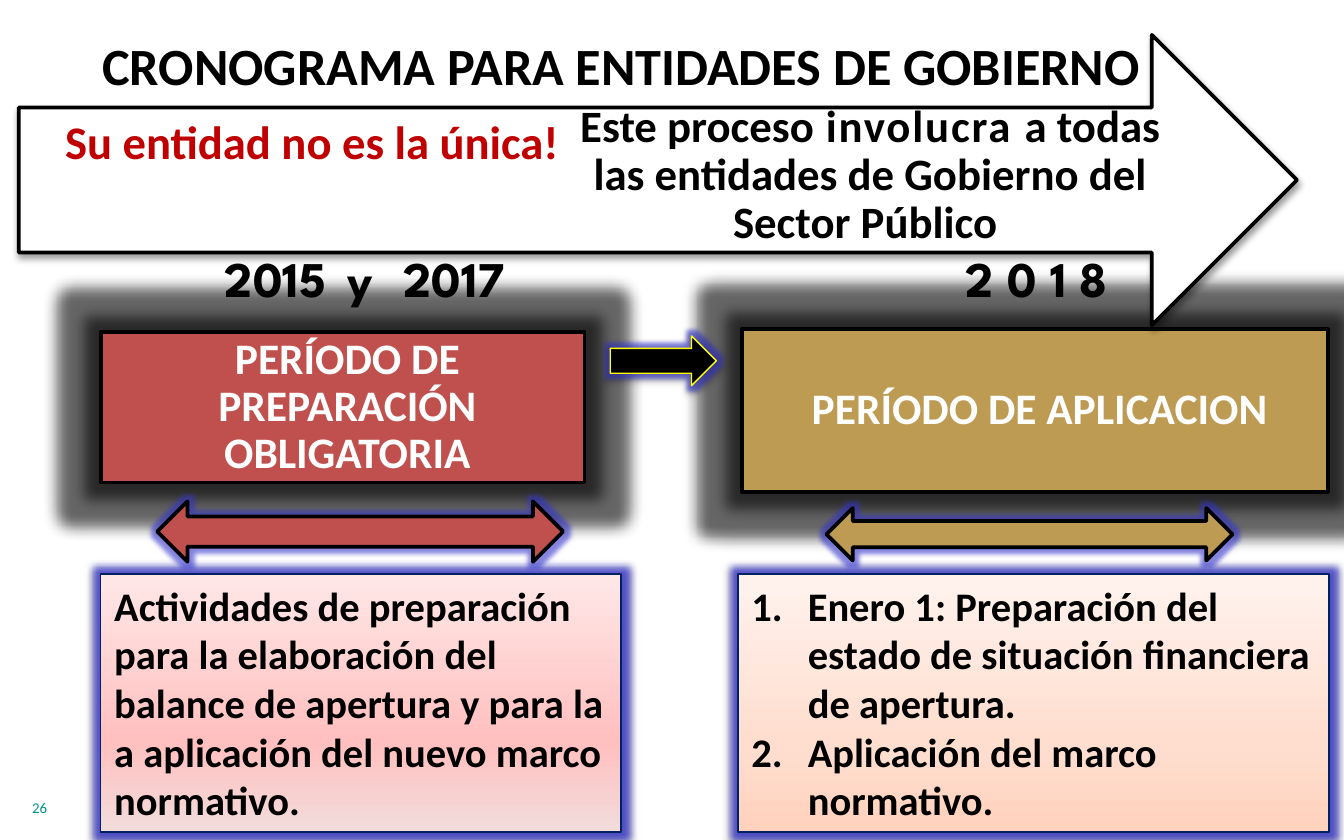
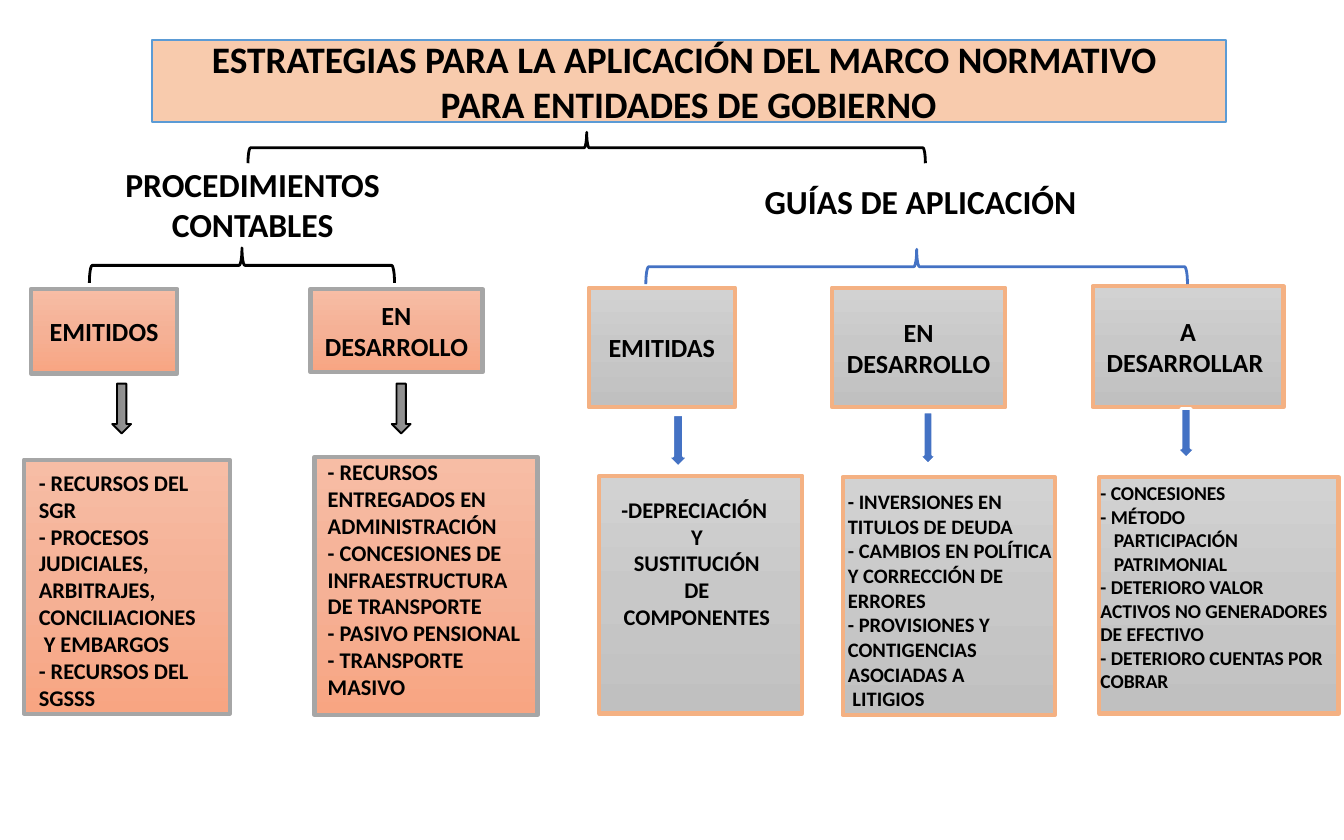
from lxml.etree import SubElement
from pptx import Presentation
from pptx.dml.color import RGBColor
from pptx.enum.shapes import MSO_SHAPE
from pptx.enum.text import MSO_ANCHOR, MSO_AUTO_SIZE, PP_ALIGN
from pptx.oxml.ns import qn
from pptx.util import Emu, Inches, Pt

# Grid of square cells: 100 columns by 62.5 rows
CELL = Inches(0.1)
COLUMNS, ROWS = 100, 62.5
FIRST_NUMBER = 26
BODY_FONT, YEAR_FONT = "Calibri", "League Spartan"
DEFAULT_INSETS = (1, 0.5, 1, 0.5)

COLORS = {
    "black": "000000", "white": "FFFFFF", "red": "C0504D", "gold": "BD9B53",
    "alert": "C00000", "navy": "002060", "yellow": "FFFF00", "glow": "3333CC",
    "number": "00918E", "blue": "4472C4", "orange": "F4B183", "silver": "A6A6A6",
    "peach": "F8CBAD", "sky": "5B9BD5",
}

# Gradients: direction (counter-clockwise degrees) and stops
GRADIENTS = {
    "rose": (90, [(0, "F2DCDB"), (35, "FFC0BF"), (100, "FFE7E7")]),
    "apricot": (90, [(0, "FFD2BD"), (35, "FFDED0"), (100, "FFF2ED")]),
    "gray": (270, [(0, "D2D2D2"), (50, "C8C8C8"), (100, "C0C0C0")]),
    "salmon": (270, [(0, "F7BDA5"), (50, "F5B196"), (100, "F8A582")]),
    "steel": (270, [(0, "9D9D9D"), (50, "909090"), (100, "7C7C7C")]),
}


def cells(*values):
    return [Emu(round(value * CELL)) for value in values]


def rgb(name):
    return RGBColor.from_string(COLORS[name])


def place(shape, box):
    shape.left, shape.top, shape.width, shape.height = cells(*box)


# Fills, lines and effects
def paint(shape, fill=None, line=None, width=1):
    if fill in GRADIENTS:
        angle, stops = GRADIENTS[fill]
        shape.fill.gradient()
        shape.fill.gradient_angle = angle
        stop_list = shape.element.spPr.find(".//" + qn("a:gsLst"))
        stop_list.clear()
        for position, color in stops:
            stop = SubElement(stop_list, qn("a:gs"), pos=str(position * 1000))
            SubElement(stop, qn("a:srgbClr"), val=color)
    elif fill:
        shape.fill.solid()
        shape.fill.fore_color.rgb = rgb(fill)
    else:
        shape.fill.background()
    if line:
        shape.line.color.rgb = rgb(line)
        shape.line.width = Pt(width)


def add_effect(shape, tag, color, alpha, **lengths):
    effects = shape.element.spPr.find(qn("a:effectLst"))
    attributes = {name: str(value) for name, value in lengths.items()}
    effect = SubElement(effects, qn(tag), attributes)
    color_element = SubElement(effect, qn("a:srgbClr"), val=COLORS[color])
    SubElement(color_element, qn("a:alpha"), val=str(alpha * 1000))


def add_glow(shape, color, alpha, radius):
    add_effect(shape, "a:glow", color, alpha, rad=Pt(radius))


def add_drop_shadow(shape):
    add_effect(shape, "a:outerShdw", "black", 38, blurRad=Pt(3.1), dist=Pt(1.6),
               dir=90 * 60000, rotWithShape=0)


# Text: a paragraph is a string or a list of (text, letter spacing in points)
def write(shape, paragraphs, size, color="black", bold=True, font=BODY_FONT,
          align=PP_ALIGN.LEFT, anchor=MSO_ANCHOR.TOP, insets=DEFAULT_INSETS,
          spacing=1.0, numbered=False, indents=None):
    frame = shape.text_frame
    frame.word_wrap = True
    frame.auto_size = MSO_AUTO_SIZE.NONE
    frame.vertical_anchor = anchor
    (frame.margin_left, frame.margin_top,
     frame.margin_right, frame.margin_bottom) = cells(*insets)
    for index, content in enumerate(paragraphs):
        paragraph = frame.paragraphs[0] if index == 0 else frame.add_paragraph()
        paragraph.alignment = align
        paragraph.line_spacing = spacing
        paragraph.space_before = paragraph.space_after = Pt(0)
        properties = paragraph._p.get_or_add_pPr()
        margin = Inches(0.42) if numbered else Inches((indents or {}).get(index, 0))
        properties.set("marL", str(margin))
        properties.set("indent", str(-margin if numbered else 0))
        if numbered:
            SubElement(properties, qn("a:buAutoNum"), type="arabicPeriod")
        else:
            SubElement(properties, qn("a:buNone"))
        for text, tracking in [(content, 0)] if isinstance(content, str) else content:
            run = paragraph.add_run()
            run.text = text
            run.font.name, run.font.size = font, Pt(size)
            run.font.bold, run.font.color.rgb = bold, rgb(color)
            if tracking:
                run.font._element.set("spc", str(round(tracking * 100)))


def add_text(slide, box, paragraphs, size, **options):
    shape = slide.shapes.add_textbox(*cells(*box))
    write(shape, paragraphs, size, **options)


def add_figure(slide, kind, box, fill, line, width, rotation=0):
    shape = slide.shapes.add_shape(kind, *cells(*box))
    shape.rotation = rotation
    shape.shadow.inherit = False
    paint(shape, fill, line, width)
    return shape


def add_label_box(slide, box, text, size, fill, line, width, color="black", **options):
    shape = add_figure(slide, MSO_SHAPE.RECTANGLE, box, fill, line, width)
    write(shape, [text], size, color=color, align=PP_ALIGN.CENTER,
          anchor=MSO_ANCHOR.MIDDLE, **options)
    return shape


def add_brace(slide, box, color):
    add_figure(slide, MSO_SHAPE.LEFT_BRACE, box, None, color, 1.5, rotation=90)


def set_title(slide, box, lines, size, anchor):
    title = slide.shapes.title
    place(title, box)
    write(title, lines, size, align=PP_ALIGN.CENTER, anchor=anchor)
    return title


def add_slide_number(slide):
    shape = slide.shapes.add_textbox(*cells(1.4, 58.9, 20.8, 3))
    paragraph = shape.text_frame.paragraphs[0]
    field = SubElement(paragraph._p, qn("a:fld"), type="slidenum",
                       id="{B6F15528-21DE-4FAA-801E-634DDDAF4B2B}")
    properties = SubElement(field, qn("a:rPr"), lang="es-CO", sz="800")
    fill = SubElement(properties, qn("a:solidFill"))
    SubElement(fill, qn("a:srgbClr"), val=COLORS["number"])
    SubElement(properties, qn("a:latin"), typeface=BODY_FONT)
    SubElement(field, qn("a:t")).text = str(FIRST_NUMBER)


# Schedule slide
def add_period(slide, box, text, color, arrow_box):
    period = add_label_box(slide, box, text, 23.3, color, "black", 2, color="white",
                           spacing=0.9, insets=(5.1, 0.4, 4.4, 0.4))
    add_glow(period, "black", 60, 16)
    arrow = add_figure(slide, MSO_SHAPE.LEFT_RIGHT_ARROW, arrow_box, color, "black", 2)
    add_glow(arrow, "glow", 60, 5)


def fill_activities(placeholder, box, paragraphs, fill, numbered):
    place(placeholder, box)
    placeholder.shadow.inherit = False
    paint(placeholder, fill, "navy", 0.75)
    add_glow(placeholder, "glow", 75, 8)
    add_drop_shadow(placeholder)
    write(placeholder, paragraphs, 21.7, numbered=numbered)


def build_schedule(presentation):
    slide = presentation.slides.add_slide(presentation.slide_layouts[3])
    set_title(slide, (3.5, 2, 85.4, 5.7), ["CRONOGRAMA PARA ENTIDADES DE GOBIERNO"],
              28, MSO_ANCHOR.TOP)
    add_slide_number(slide)

    # Periods and their activities
    add_period(slide, (7.5, 24.7, 36, 11.2), "PERÍODO DE PREPARACIÓN OBLIGATORIA",
               "red", (11.7, 37.3, 30.2, 4.5))
    add_period(slide, (55.2, 24.5, 43.6, 12.1), "PERÍODO DE APLICACION ",
               "gold", (61.5, 37.8, 30.2, 3.9))
    fill_activities(
        slide.placeholders[1], (7.5, 42.7, 38.7, 19.2),
        ["Actividades de preparación para la elaboración del balance de apertura "
         "y para la a aplicación del nuevo marco normativo."], "rose", False)
    fill_activities(
        slide.placeholders[2], (54.9, 42.7, 44, 19.2),
        ["Enero 1: Preparación del estado de situación financiera de apertura.",
         "Aplicación del marco normativo."], "apricot", True)

    # Years
    years = [((14.6, 17.9, 25.1, 5.5), [("2015", 0), (" y ", 4.5), ("2017", 0)]),
             ((69.6, 17.9, 15.1, 5.5), "2 0 1 8")]
    for box, text in years:
        add_text(slide, box, [text], 26.7, font=YEAR_FONT, align=PP_ALIGN.CENTER)

    # Step from one period to the next
    step = add_figure(slide, MSO_SHAPE.RIGHT_ARROW, (45.4, 25, 7.9, 3.7),
                      "black", "yellow", 0.75)
    add_glow(step, "glow", 60, 5)
    add_drop_shadow(step)

    # Large arrow with its two messages
    banner = add_figure(slide, MSO_SHAPE.RIGHT_ARROW, (1.4, 2.6, 95.1, 21.6),
                        "white", "black", 2)
    add_drop_shadow(banner)
    add_text(slide, (42.1, 0.8, 45.3, 14.5),
             [[("Este proceso", 0), (" involucra ", 1),
               ("a todas las entidades de Gobierno del Sector Público ", 0)]],
             24, align=PP_ALIGN.CENTER, spacing=0.9, insets=(0, 6.9, 0, 0))
    add_text(slide, (4.3, 0.8, 37.8, 14.5), ["Su entidad no es la única!"], 25,
             color="alert", align=PP_ALIGN.CENTER, spacing=0.9, insets=(0, 8.1, 0, 0))


# Strategy slide: styles are fill and line of the boxes, then of the arrows
PROCEDURE = ("salmon", "silver", "steel", "black", 1)
GUIDE = ("gray", "orange", "blue", "white", 1.5)

# Style, heading and its box, arrow box, panel box, detail box, size, lines, indents
BRANCHES = [
    (PROCEDURE, "EMITIDOS", (2.3, 21.5, 10.9, 6.3), (7.2, 29.7, 3.7, 1.4),
     (1.8, 34.2, 15.3, 18.9), (1.9, 34.4, 16.2, 19.2), 12,
     ["- RECURSOS DEL SGR", "- PROCESOS JUDICIALES, ARBITRAJES, CONCILIACIONES",
      " Y EMBARGOS", "- RECURSOS DEL SGSSS"], {}),
    (PROCEDURE, "EN DESARROLLO", (23.1, 21.5, 12.8, 6.2), (28, 29.7, 3.7, 1.4),
     (23.4, 34, 16.6, 19.2), (23.4, 33.6, 18.1, 19.2), 12,
     ["- RECURSOS ENTREGADOS EN ADMINISTRACIÓN", "- CONCESIONES DE INFRAESTRUCTURA",
      "DE TRANSPORTE", "- PASIVO PENSIONAL", "- TRANSPORTE MASIVO"], {}),
    (GUIDE, "EMITIDAS", (43.8, 21.4, 10.9, 8.9), (48.5, 32, 3.9, 1.6),
     (44.6, 35.4, 15.1, 17.7), (44.9, 36.4, 13.9, 11.1), 12,
     ["-DEPRECIACIÓN ", "Y", " SUSTITUCIÓN ", "DE", "COMPONENTES"], {}),
    (GUIDE, "EN DESARROLLO", (61.9, 21.4, 12.9, 8.9), (67.1, 31.9, 3.9, 1.4),
     (62.7, 35.5, 15.8, 17.7), (62.1, 35.9, 17.2, 17.7), 11,
     ["- INVERSIONES EN", "TITULOS DE DEUDA",
      "- CAMBIOS EN POLÍTICA Y CORRECCIÓN DE ERRORES",
      "- PROVISIONES Y CONTIGENCIAS ASOCIADAS A", " LITIGIOS"], {}),
    (GUIDE, "A DESARROLLAR ", (81.3, 21.3, 14.2, 9), (86.4, 31.5, 3.7, 1.5),
     (81.8, 35.5, 17.8, 17.6), (80.9, 35.3, 19.3, 16.9), 10.5,
     ["- CONCESIONES", "- MÉTODO", "PARTICIPACIÓN", "PATRIMONIAL",
      "- DETERIORO VALOR ACTIVOS NO GENERADORES DE EFECTIVO",
      "- DETERIORO CUENTAS POR COBRAR"], {2: 0.1, 3: 0.1}),
]


def add_branch(slide, style, heading, heading_box, arrow_box, panel_box,
               detail_box, size, lines, indents):
    fill, line, arrow_fill, arrow_line, arrow_width = style
    add_label_box(slide, heading_box, heading, 14, fill, line, 2.25)
    add_figure(slide, MSO_SHAPE.RIGHT_ARROW, arrow_box, arrow_fill, arrow_line,
               arrow_width, rotation=90)
    add_figure(slide, MSO_SHAPE.RECTANGLE, panel_box, fill, line, 2.25)
    align = PP_ALIGN.CENTER if heading == "EMITIDAS" else PP_ALIGN.LEFT
    add_text(slide, detail_box, lines, size, align=align, indents=indents)


def build_strategies(presentation):
    slide = presentation.slides.add_slide(presentation.slide_layouts[5])
    title = set_title(slide, (11.3, 3, 79.9, 6.1),
                      ["ESTRATEGIAS PARA LA APLICACIÓN DEL MARCO NORMATIVO ",
                       "PARA ENTIDADES DE GOBIERNO"], 20, MSO_ANCHOR.MIDDLE)
    outline = SubElement(title.element.spPr, qn("a:prstGeom"), prst="roundRect")
    SubElement(outline, qn("a:avLst"))
    paint(title, "peach", "sky", 1)

    # Two families, each opened by a brace
    add_text(slide, (6, 11.7, 25.6, 7.1), ["PROCEDIMIENTOS", "CONTABLES"], 18,
             align=PP_ALIGN.CENTER)
    add_text(slide, (55.7, 13, 25.6, 4), ["GUÍAS DE APLICACIÓN"], 18,
             align=PP_ALIGN.CENTER)
    for branch in BRANCHES:
        add_branch(slide, *branch)
    add_brace(slide, (42.5, -14.2, 2.3, 50.4), "black")
    add_brace(slide, (16.7, 8.4, 2.6, 22.7), "black")
    add_brace(slide, (66.9, -0.3, 2.6, 40.3), "blue")


def main():
    presentation = Presentation()
    presentation.slide_width, presentation.slide_height = cells(COLUMNS, ROWS)
    presentation.element.set("firstSlideNum", str(FIRST_NUMBER))
    build_schedule(presentation)
    build_strategies(presentation)
    presentation.save("out.pptx")


if __name__ == "__main__":
    main()
